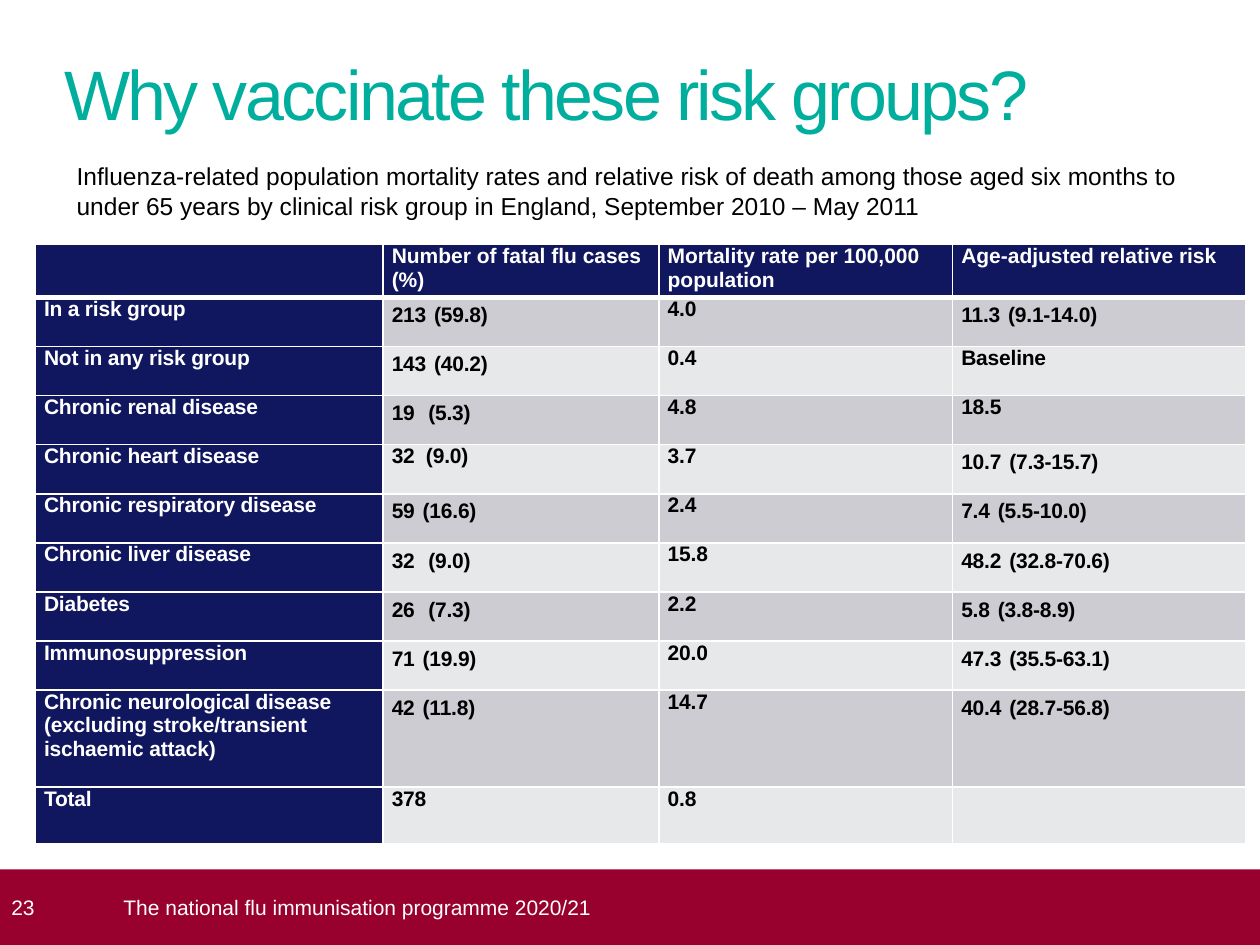
from lxml.etree import SubElement
from pptx import Presentation
from pptx.dml.color import RGBColor
from pptx.enum.shapes import MSO_SHAPE
from pptx.enum.text import MSO_ANCHOR, MSO_AUTO_SIZE, PP_ALIGN
from pptx.oxml.ns import qn
from pptx.util import Inches, Pt

TITLE = "Why vaccinate these risk groups?"
INTRO = ("Influenza-related population mortality rates and relative risk of death "
         "among those aged six months to under 65 years by clinical risk group "
         "in England, September 2010 – May 2011")
FOOTER = "The national flu immunisation programme 2020/21"
PAGE_NUMBER = "23"
WIDE_GAP = "|"
ROWS = [
    ("", "Number of fatal flu cases (%)", "Mortality rate per 100,000 population",
     "Age-adjusted relative risk"),
    ("In a risk group", "213|(59.8)", "4.0", "11.3|(9.1-14.0)"),
    ("Not in any risk group", "143|(40.2)", "0.4", "Baseline"),
    ("Chronic renal disease", "19 |(5.3)", "4.8", "18.5"),
    ("Chronic heart disease", "32  (9.0)", "3.7", "10.7|(7.3-15.7)"),
    ("Chronic respiratory disease", "59|(16.6)", "2.4", "7.4|(5.5-10.0)"),
    ("Chronic liver disease", "32 |(9.0)", "15.8", "48.2|(32.8-70.6)"),
    ("Diabetes", "26 |(7.3)", "2.2", "5.8|(3.8-8.9)"),
    ("Immunosuppression", "71|(19.9)", "20.0", "47.3|(35.5-63.1)"),
    ("Chronic neurological disease (excluding stroke/transient ischaemic attack)",
     "42|(11.8)", "14.7", "40.4|(28.7-56.8)"),
    ("Total", "378", "0.8", ""),
]
COLUMN_WIDTHS = [2.76, 2.19, 2.33, 2.33]
ROW_HEIGHTS = [0.42] + [0.39] * 8 + [0.77, 0.45]
WHITE, BLACK, TEAL, NAVY, CRIMSON = "FFFFFF", "000000", "00AE9E", "11175E", "98002E"
BANDS = ["E7E8EA", "CCCCD2"]


def paint(fill, color):
    fill.solid()
    fill.fore_color.rgb = RGBColor.from_string(color)


def write(frame, text, size=12, color=BLACK, bold=False, spacing=0, gap_size=16,
          before=0, after=0, anchor=None, margins=None):
    frame.word_wrap = True
    frame.auto_size = MSO_AUTO_SIZE.NONE
    if anchor is not None:
        frame.vertical_anchor = anchor
    if margins:
        (frame.margin_left, frame.margin_top,
         frame.margin_right, frame.margin_bottom) = map(Inches, margins)
    para = frame.paragraphs[0]
    para.alignment = PP_ALIGN.LEFT
    para.space_before, para.space_after = Pt(before), Pt(after)
    head, gap, tail = text.partition(WIDE_GAP)
    for part, points in [(head, size), (" " if gap else "", gap_size), (tail, size)]:
        if part:
            span = para.add_run()
            span.text = part
            span.font.name = "Arial"
            span.font.size = Pt(points)
            span.font.bold = bold
            paint(span.font.fill, color)
            span.font._element.set("spc", str(round(spacing * 100)))


def add_borders(cell, widths):
    properties = cell._tc.get_or_add_tcPr()
    for index, (side, width) in enumerate(widths.items()):
        line = properties.makeelement(qn(f"a:{side}"), {"w": str(Pt(width))})
        SubElement(SubElement(line, qn("a:solidFill")), qn("a:srgbClr"), val=WHITE)
        properties.insert(index, line)


def add_label(page, text, left, top, width, height, **style):
    box = page.shapes.add_textbox(*map(Inches, (left, top, width, height)))
    write(box.text_frame, text, **style)


def add_risk_table(page):
    table = page.shapes.add_table(
        len(ROWS), len(COLUMN_WIDTHS), Inches(0.28), Inches(1.94),
        Inches(sum(COLUMN_WIDTHS)), Inches(sum(ROW_HEIGHTS))).table
    for column, width in zip(table.columns, COLUMN_WIDTHS):
        column.width = Inches(width)
    for row, (values, height) in enumerate(zip(ROWS, ROW_HEIGHTS)):
        table.rows[row].height = Inches(height)
        for column, value in enumerate(values):
            cell = table.cell(row, column)
            heading = row == 0 or column == 0
            cell.margin_left = cell.margin_right = Inches(0.07)
            cell.margin_top = cell.margin_bottom = 0
            paint(cell.fill, NAVY if heading else BANDS[row % 2])
            add_borders(cell, {"lnL": 1, "lnR": 1, "lnT": 3 if row == 1 else 1,
                               "lnB": 3 if row == 0 else 1})
            write(cell.text_frame, value, color=WHITE if heading else BLACK, bold=True,
                  spacing=-0.1 if row else 0, before=3, after=3 if heading else 0)


def main():
    deck = Presentation()
    deck.slide_width, deck.slide_height = Inches(10), Inches(7.5)
    page = deck.slides.add_slide(deck.slide_layouts[5])

    title = page.shapes.title
    title.left, title.top, title.width, title.height = map(Inches, (0.51, 0.36, 7.99, 0.71))
    write(title.text_frame, TITLE, size=40, color=TEAL, spacing=-1.5,
          anchor=MSO_ANCHOR.BOTTOM, margins=(0, 0, 0, 0))

    add_risk_table(page)

    band = page.shapes.add_shape(MSO_SHAPE.RECTANGLE, 0, Inches(6.9), Inches(10), Inches(0.6))
    band.shadow.inherit = False
    paint(band.fill, CRIMSON)
    band.line.fill.background()
    write(band.text_frame, PAGE_NUMBER, color=WHITE, anchor=MSO_ANCHOR.MIDDLE,
          margins=(0.09, 0, 0.1, 0))

    add_label(page, INTRO, 0.51, 1.23, 9.37, 0.57, size=14)
    add_label(page, FOOTER, 0.98, 6.9, 8.82, 0.6, color=WHITE,
              anchor=MSO_ANCHOR.MIDDLE, margins=(0, 0, 0, 0))
    deck.save("out.pptx")


if __name__ == "__main__":
    main()
